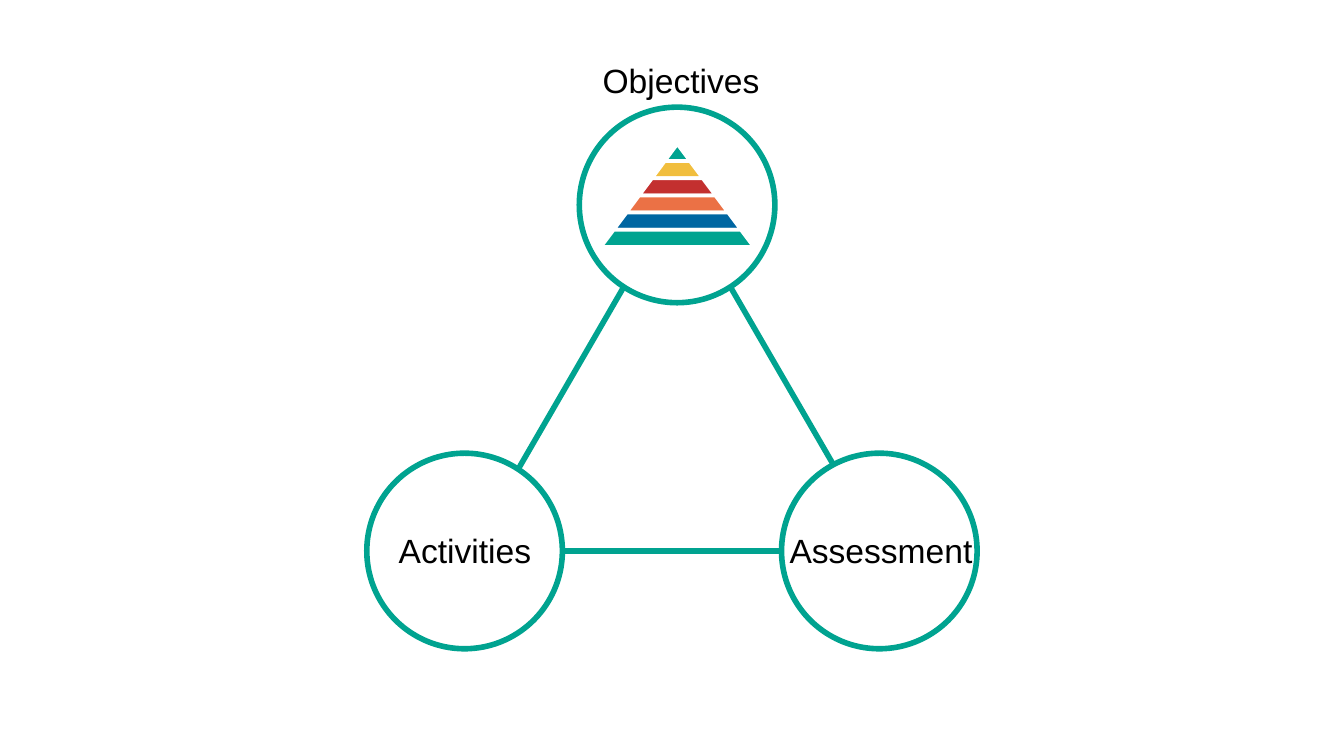
from pptx import Presentation
from pptx.dml.color import RGBColor
from pptx.enum.shapes import MSO_SHAPE
from pptx.enum.text import MSO_AUTO_SIZE, PP_ALIGN
from pptx.util import Inches, Pt

COLORS = {
    "teal": "00A390",
    "yellow": "F1BE3E",
    "red": "C3302F",
    "orange": "EB7145",
    "blue": "0066A2",
    "white": "FFFFFF",
    "black": "000000",
}
WIDTH = Inches(10)
HEIGHT = WIDTH * 9 // 16
CELL = WIDTH // 100
DIAMETER = 14.55
CIRCLES = [(34.57, 41), (65.43, 41), (50.38, 15.25)]
LABELS = [
    ("Assessment", 65.55, 40.95, 15.8),
    ("Activities", 34.6, 40.95, 12),
    ("Objectives", 50.67, 5.95, 13.8),
]
TIERS = ["teal", "yellow", "red", "orange", "blue", "teal"]
TIER_CENTER, TIER_TOP = 50.4, 10.7
TIER_STEP, TIER_HEIGHT = 1.9, 1.28
TIER_SLOPE = 0.75


def cells(*values):
    """Convert counts of grid cells to slide lengths."""
    return [round(v * CELL) for v in values]


def color(name):
    """Return the named palette colour."""
    return RGBColor.from_string(COLORS[name])


def add_outlined(s, kind, box, fill, line, width):
    """Add a filled preset shape with an outline."""
    sp = s.shapes.add_shape(kind, *cells(*box))
    sp.shadow.inherit = False
    sp.fill.solid()
    sp.fill.fore_color.rgb = color(fill)
    sp.line.color.rgb = color(line)
    sp.line.width = Pt(width)
    return sp


def add_circle(s, cx, cy):
    """Add a circle around a corner of the triangle."""
    box = (cx - DIAMETER / 2, cy - DIAMETER / 2, DIAMETER, DIAMETER)
    add_outlined(s, MSO_SHAPE.OVAL, box, "white", "teal", 3)


def add_label(s, text, cx, cy, width, height=4):
    """Add a centred one-line label."""
    sp = s.shapes.add_textbox(*cells(cx - width / 2, cy - height / 2, width, height))
    tf = sp.text_frame
    tf.word_wrap = False
    tf.auto_size = MSO_AUTO_SIZE.SHAPE_TO_FIT_TEXT
    p = tf.paragraphs[0]
    p.text = text
    p.alignment = PP_ALIGN.CENTER
    p.font.name = "Arial"
    p.font.size = Pt(18)
    p.font.color.rgb = color("black")


def add_pyramid(s):
    """Stack the coloured tiers, each one step wider than the one above."""
    for i, fill in enumerate(TIERS):
        width = TIER_STEP * (i + 1)
        box = (TIER_CENTER - width / 2, TIER_TOP + i * TIER_HEIGHT, width, TIER_HEIGHT)
        sp = add_outlined(s, MSO_SHAPE.TRAPEZOID, box, fill, "white", 2)
        sp.adjustments[0] = TIER_SLOPE


def main():
    """Build the slide and save it."""
    prs = Presentation()
    prs.slide_width, prs.slide_height = WIDTH, HEIGHT
    s = prs.slides.add_slide(prs.slide_layouts[6])
    triangle = (35.03, 14.5, 30.7, 26.5)
    add_outlined(s, MSO_SHAPE.ISOSCELES_TRIANGLE, triangle, "white", "teal", 3)
    for center in CIRCLES:
        add_circle(s, *center)
    add_pyramid(s)
    for label in LABELS:
        add_label(s, *label)
    prs.save("out.pptx")


if __name__ == "__main__":
    main()
